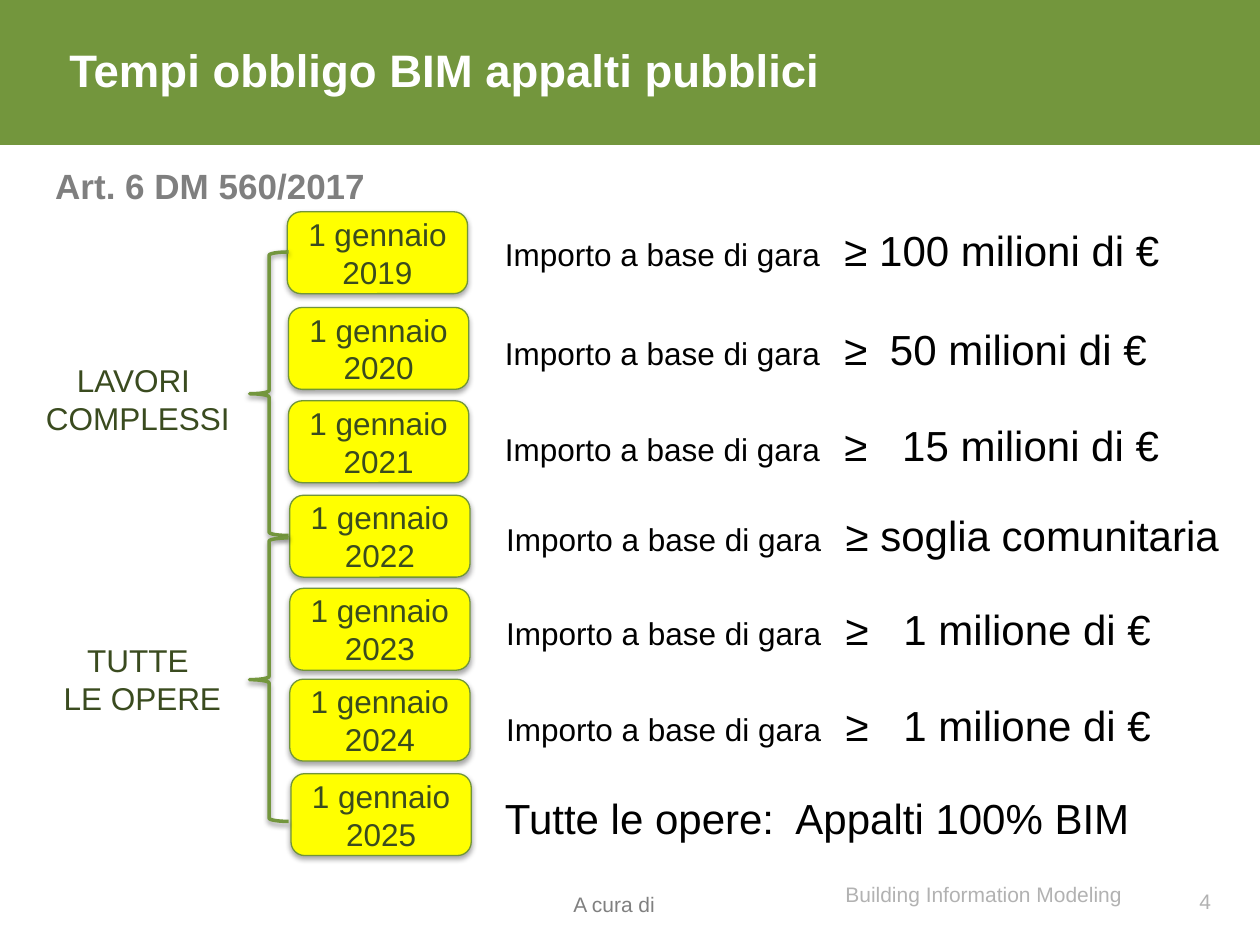
from lxml.etree import SubElement
from pptx import Presentation
from pptx.dml.color import RGBColor
from pptx.enum.shapes import MSO_SHAPE
from pptx.enum.text import MSO_ANCHOR, MSO_AUTO_SIZE, PP_ALIGN
from pptx.oxml.ns import qn
from pptx.util import Pt

C = {"green": "73963D", "edge": "719539", "dark": "3A4B1F", "yellow": "FFFF00",
     "white": "FFFFFF", "black": "000000", "heading": "7F7F7F",
     "credit": "808080", "footer": "B2B2B2"}
LEAD = "Importo a base di gara"
ROWS = [
    ("2019", 164.2, 121, 281.5, 122.4, LEAD, "\t≥ 100 milioni di €", [194]),
    ("2020", 164.9, 175.7, 281.5, 178.6, LEAD, "\t≥\t50 milioni di €", [194, 220]),
    ("2021", 164.9, 229, 281.5, 234, LEAD, "\t≥\t15 milioni di €", [194, 227]),
    ("2022", 165.6, 283, 282.2, 285.1, LEAD, "\t≥ soglia comunitaria", [194]),
    ("2023", 165.6, 336.2, 282.2, 339.1, LEAD, "\t≥\t1 milione di €", [194, 227]),
    ("2024", 165.6, 388.1, 282.2, 393.8, LEAD, "\t≥\t1 milione di €", [194, 227]),
    ("2025", 166.3, 442.1, 281.5, 447.1, "", "Tutte le opere:\tAppalti 100% BIM", [166]),
]
GROUPS = [
    (144, (18.7, 203, 120.2, 51.1), "LAVORI \nCOMPLESSI"),
    (307.4, (28.8, 362.9, 105.1, 51.1), "TUTTE \nLE OPERE"),
]
FOOTERS = [
    ("A cura di", (327.6, 500.4, 158.4, 28.8), "credit"),
    ("Building Information Modeling", (483.1, 494.6, 175, 28.8), "footer"),
]


def rgb(name):
    return RGBColor.from_string(C[name])


def style(runs, size, color, bold=False):
    for r in runs:
        r.font.name = "Arial"
        r.font.size = Pt(size)
        r.font.bold = bold
        r.font.color.rgb = rgb(color)


def fill_text(sp, text, size, color, bold=False, align=PP_ALIGN.LEFT,
              anchor=MSO_ANCHOR.TOP, ins=(7.2, 3.6, 7.2, 3.6), wrap=True):
    tf = sp.text_frame
    tf.text = text
    tf.word_wrap = wrap
    tf.auto_size = MSO_AUTO_SIZE.NONE
    tf.vertical_anchor = anchor
    tf.margin_left, tf.margin_top, tf.margin_right, tf.margin_bottom = map(Pt, ins)
    for p in tf.paragraphs:
        p.alignment = align
        style(p.runs, size, color, bold)
    return tf


def textbox(box, *args, **kw):
    sp = s.shapes.add_textbox(*map(Pt, box))
    return fill_text(sp, *args, **kw)


def add_shape(kind, box, fill, line, width, shadow=0):
    sp = s.shapes.add_shape(kind, *map(Pt, box))
    sp.shadow.inherit = False
    if fill:
        sp.fill.solid()
        sp.fill.fore_color.rgb = rgb(fill)
    else:
        sp.fill.background()
    if line:
        sp.line.color.rgb = rgb(line)
        sp.line.width = Pt(width)
    else:
        sp.line.fill.background()
    if shadow:
        effects = sp._element.spPr.find(qn("a:effectLst"))
        outer = SubElement(effects, qn("a:outerShdw"), blurRad=str(Pt(3.1)),
                           dist=str(Pt(1.7)), dir="5400000", rotWithShape="0")
        color = SubElement(outer, qn("a:srgbClr"), val=C["black"])
        SubElement(color, qn("a:alpha"), val=str(shadow * 1000))
    return sp


def add_tabs(p, stops):
    tabs = SubElement(p._p.get_or_add_pPr(), qn("a:tabLst"))
    for stop in stops:
        SubElement(tabs, qn("a:tab"), pos=str(Pt(stop)), algn="l")


prs = Presentation()
prs.slide_width, prs.slide_height = Pt(720), Pt(540)
s = prs.slides.add_slide(prs.slide_layouts[5])

band = add_shape(MSO_SHAPE.RECTANGLE, (0, 0, 720, 82.8), "green", None, 0)
s.shapes._spTree.insert(2, band._element)

title = s.shapes.title
title.left, title.top, title.width, title.height = map(Pt, (32.4, 23.8, 648, 31.7))
fill_text(title, "Tempi obbligo BIM appalti pubblici", 26, "white", True,
          anchor=MSO_ANCHOR.MIDDLE, ins=(7.2, 0, 7.2, 0))
textbox((24.5, 87.8, 648, 31.7), "Art. 6 DM 560/2017", 20, "heading", True,
        ins=(7.2, 6, 7.2, 3.6))

for year, x, y, text_x, text_y, lead, amount, stops in ROWS:
    date = add_shape(MSO_SHAPE.ROUNDED_RECTANGLE, (x, y, 103, 46.8),
                     "yellow", "edge", 0.75, 35)
    fill_text(date, f"1 gennaio {year}", 18, "dark", align=PP_ALIGN.CENTER,
              anchor=MSO_ANCHOR.MIDDLE)
    tf = textbox((text_x, text_y, 432, 36), lead, 18, "black", ins=(7.2, 6, 7.2, 3.6))
    p = tf.paragraphs[0]
    add_tabs(p, stops)
    r = p.add_run()
    r.text = amount
    style([r], 24, "black")

for y, box, label in GROUPS:
    add_shape(MSO_SHAPE.LEFT_BRACE, (142.6, y, 22.3, 162), None, "green", 2, 38)
    textbox(box, label, 18, "dark", align=PP_ALIGN.CENTER, wrap=False)

for text, box, color in FOOTERS:
    textbox(box, text, 12, color, anchor=MSO_ANCHOR.MIDDLE, ins=(0, 3.6, 7.2, 0))
textbox((658.1, 500.4, 41, 28.8), "4", 12, "footer", align=PP_ALIGN.RIGHT,
        anchor=MSO_ANCHOR.MIDDLE)

prs.save("out.pptx")
